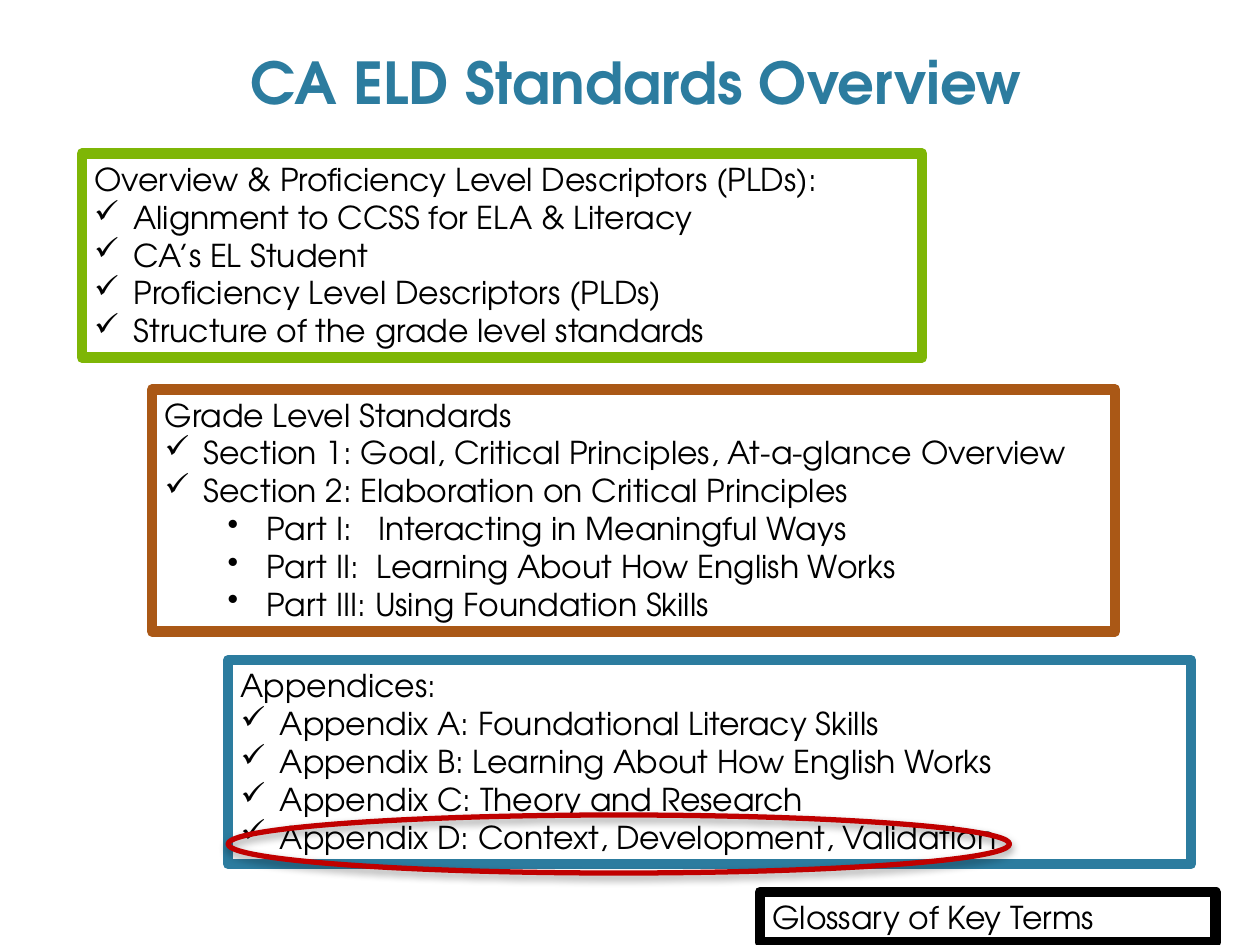
import pptx
import pptx.dml.color
import pptx.enum.shapes
import pptx.enum.text
import pptx.oxml
import pptx.oxml.ns
import pptx.util
from pptx.util import Cm

FONT = "TeX Gyre Adventor"
BLUE = "2C7C9F"
TITLE = "CA ELD Standards Overview"
BULLETS = {1: "✓", 2: "•"}
INDENTS = {1: 0.79, 2: 2.06}  # text start of each level, cm
HANGING = 0.79

# Each panel: line colour, (left, top, width, height) in cm, (level, text) lines
PANELS = [
    ("7EB606", (1.65, 3.1, 16.94, 4.11), [
        (0, "Overview & Proficiency Level Descriptors (PLDs):"),
        (1, "Alignment to CCSS for ELA & Literacy"),
        (1, "CA’s EL Student"),
        (1, "Proficiency Level Descriptors (PLDs)"),
        (1, "Structure of the grade level standards"),
    ]),
    ("AA5816", (3.07, 7.85, 19.41, 4.88), [
        (0, "Grade Level Standards"),
        (1, "Section 1: Goal, Critical Principles, At-a-glance Overview"),
        (1, "Section 2: Elaboration on Critical Principles"),
        (2, "Part I:   Interacting in Meaningful Ways"),
        (2, "Part II:  Learning About How English Works"),
        (2, "Part III: Using Foundation Skills"),
    ]),
    (BLUE, (4.6, 13.31, 19.41, 4.11), [
        (0, "Appendices:"),
        (1, "Appendix A: Foundational Literacy Skills"),
        (1, "Appendix B: Learning About How English Works"),
        (1, "Appendix C: Theory and Research"),
        (1, "Appendix D: Context, Development, Validation"),
    ]),
    ("000000", (15.32, 17.98, 9.19, 1.02), [(0, "Glossary of Key Terms")]),
]


def colour(value):
    return pptx.dml.color.RGBColor.from_string(value)


def format_text(paragraph, size, value, bold=False):
    for span in paragraph.runs:
        span.font.name = FONT
        span.font.size = pptx.util.Pt(size)
        span.font.bold = bold
        span.font.color.rgb = colour(value)


def add_bullet(paragraph, level):
    paragraph.level = level - 1
    properties = paragraph._p.get_or_add_pPr()
    properties.set("marL", str(Cm(INDENTS[level])))
    properties.set("indent", str(-Cm(HANGING)))
    properties.append(pptx.oxml.parse_xml(
        f'<a:buChar {pptx.oxml.ns.nsdecls("a")} char="{BULLETS[level]}"/>'))


def add_panel(page, line_colour, place, lines):
    box = page.shapes.add_textbox(*map(Cm, place))
    box.fill.solid()
    box.fill.fore_color.rgb = colour("FFFFFF")
    box.line.color.rgb = colour(line_colour)
    box.line.width = pptx.util.Pt(6)
    frame = box.text_frame
    frame.word_wrap = True
    frame.text = "\n".join(text for _, text in lines)
    for paragraph, (level, _) in zip(frame.paragraphs, lines):
        format_text(paragraph, 18, "000000")
        if level:
            add_bullet(paragraph, level)


def add_title(page):
    box = page.shapes.add_textbox(Cm(1.65), Cm(0.13), Cm(22.35), Cm(2.34))
    frame = box.text_frame
    frame.word_wrap = True
    frame.vertical_anchor = pptx.enum.text.MSO_ANCHOR.BOTTOM
    frame.text = TITLE
    paragraph = frame.paragraphs[0]
    paragraph.alignment = pptx.enum.text.PP_ALIGN.CENTER
    paragraph.line_spacing = 1.4
    format_text(paragraph, 33, BLUE, bold=True)


def add_highlight(page):
    ring = page.shapes.add_shape(pptx.enum.shapes.MSO_SHAPE.OVAL,
                                 Cm(4.6), Cm(16.43), Cm(15.75), Cm(1.17))
    ring.fill.background()
    ring.line.color.rgb = colour("C00000")
    ring.line.width = pptx.util.Pt(3)
    # Soft shadow straight below the ring
    ring._element.spPr.append(pptx.oxml.parse_xml(
        f'<a:effectLst {pptx.oxml.ns.nsdecls("a")}>'
        f'<a:outerShdw blurRad="{pptx.util.Pt(5)}" dist="{pptx.util.Pt(2)}" '
        'dir="5400000" rotWithShape="0"><a:srgbClr val="000000">'
        '<a:alpha val="40000"/></a:srgbClr></a:outerShdw></a:effectLst>'))


def main():
    deck = pptx.Presentation()
    deck.slide_width, deck.slide_height = Cm(25.4), Cm(19.05)
    page = deck.slides.add_slide(deck.slide_layouts[6])
    for panel in PANELS:
        add_panel(page, *panel)
    add_title(page)
    add_highlight(page)
    deck.save("out.pptx")


if __name__ == "__main__":
    main()
